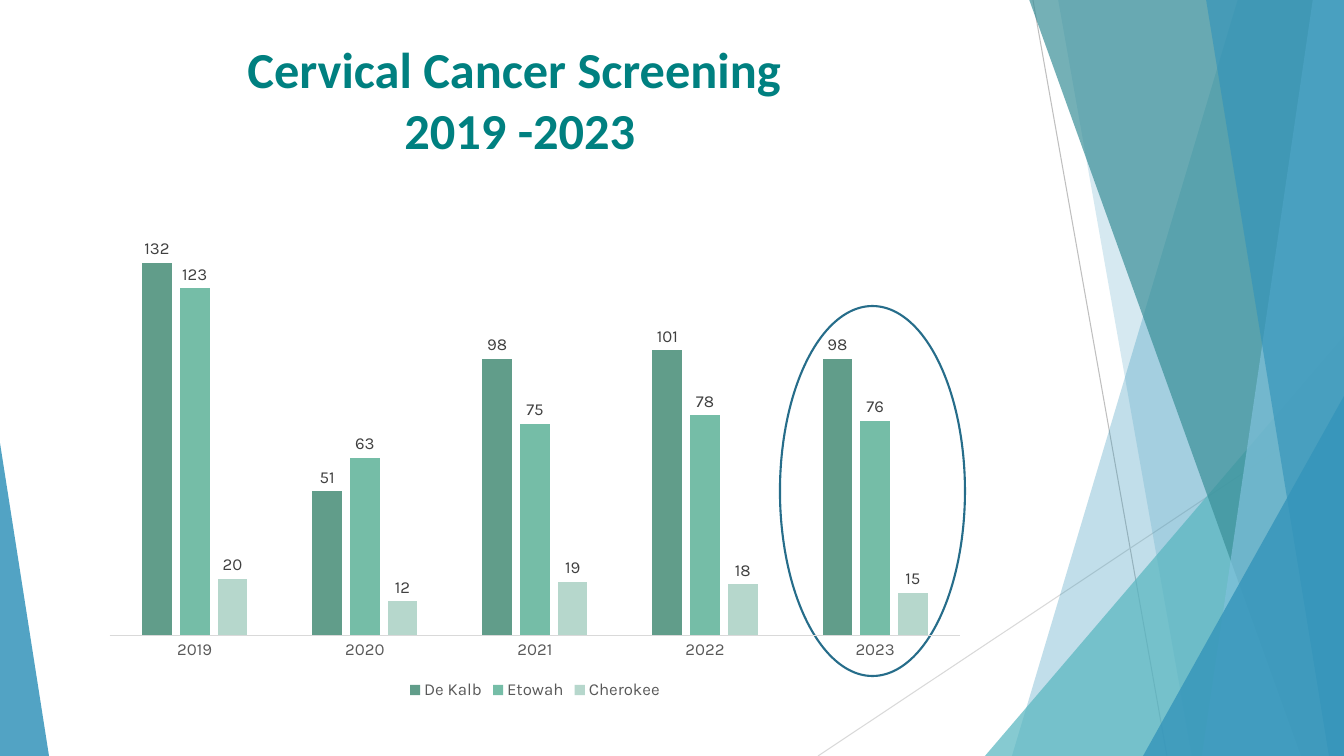
from lxml import etree
from pptx import Presentation
from pptx.chart import data
from pptx.dml import color
from pptx.enum import chart as ch, shapes, text
from pptx.oxml import ns
from pptx.util import Pt

PX = 914400 / 100.8
WIDTH, HEIGHT = 1344, 756


def emu(*lengths):
    return [round(length * PX) for length in lengths]


def paint(target, hex_color, opacity=100):
    """Colour a fill, line or font; opacity in percent applies to fills."""
    if hasattr(target, "solid"):
        target.solid()
        target = target.fore_color
    elif hasattr(target, "color"):
        target = target.color
    target.rgb = color.RGBColor.from_string(hex_color)
    if opacity < 100:
        srgb = target._xFill.find(ns.qn("a:srgbClr"))
        etree.SubElement(srgb, ns.qn("a:alpha"), val=str(opacity * 1000))


deck = Presentation()
deck.slide_width, deck.slide_height = emu(WIDTH, HEIGHT)
slide = deck.slides.add_slide(deck.slide_layouts[5])

# Thin lines behind the facets
for x1, y1, x2, y2, gray in [
    (1033, 0, 1167, HEIGHT, "BFBFBF"),
    (WIDTH, 406, 818, HEIGHT, "D9D9D9"),
]:
    ray = slide.shapes.add_connector(shapes.MSO_CONNECTOR.STRAIGHT, *emu(x1, y1, x2, y2))
    paint(ray.line, gray)
    ray.line.width = Pt(0.75)
    etree.SubElement(ray._element.spPr, ns.qn("a:effectLst"))

# Facets from back to front: bands give top and bottom x of the slanted edge,
# triangles give left, top, width, height and apex position
facets = [
    ("band", (1238, 1012), "3494BA", 30),
    ("band", (1058, 1192), "3494BA", 20),
    ("triangle", (985, 336, 359, 420, 1), "58B6C0", 72),
    ("band", (1029, 1301), "3A8F98", 70),
    ("band", (1313, 1202), "7FC1DB", 70),
    ("band", (1206, 1329), "3494BA", 65),
    ("triangle", (1143, 396, 201, 360, 1), "3494BA", 80),
    ("triangle", (0, 443, 49, 313, 0), "3494BA", 85),
]
for kind, geometry, hue, opacity in facets:
    if kind == "band":
        top_x, bottom_x = geometry
        outline = slide.shapes.build_freeform(top_x, -1, scale=PX)
        outline.add_line_segments([(WIDTH, -1), (WIDTH, HEIGHT), (bottom_x, HEIGHT)])
        facet = outline.convert_to_shape()
    else:
        *box, apex = geometry
        facet = slide.shapes.add_shape(shapes.MSO_SHAPE.ISOSCELES_TRIANGLE, *emu(*box))
        facet.adjustments[0] = apex
    paint(facet.fill, hue, opacity)
    facet.line.fill.background()
    facet.shadow.inherit = False

# Title
title = slide.shapes.title
title.left, title.top, title.width, title.height = emu(0, 30, 1040, 138)
title.text_frame.text = "Cervical Cancer Screening \v2019 -2023"
title.text_frame.word_wrap = True
title.text_frame.auto_size = text.MSO_AUTO_SIZE.NONE
title.text_frame.vertical_anchor = text.MSO_ANCHOR.MIDDLE
heading = title.text_frame.paragraphs[0]
heading.alignment = text.PP_ALIGN.CENTER
for run in heading.runs:
    run.font.name, run.font.size, run.font.bold = "Calibri", Pt(36), True
    paint(run.font, "008080")

# Ring around the latest year
ring = slide.shapes.add_shape(shapes.MSO_SHAPE.OVAL, *emu(780, 306, 185, 370))
ring.fill.background()
paint(ring.line, "266D8A")
ring.line.width = Pt(1.5)
ring.shadow.inherit = False

# Screenings by county and year
counties = [
    ("De Kalb", (132, 51, 98, 101, 98), "619D8A"),
    ("Etowah", (123, 63, 75, 78, 76), "75BDA7"),
    ("Cherokee", (20, 12, 19, 18, 15), "B6D7CC"),
]
screenings = data.CategoryChartData()
screenings.categories = ["2019", "2020", "2021", "2022", "2023"]
for county, counts, _ in counties:
    screenings.add_series(county, counts)
chart = slide.shapes.add_chart(
    ch.XL_CHART_TYPE.COLUMN_CLUSTERED, *emu(92, 231, 886, 473), screenings
).chart
chart.has_title = False
chart.font.name, chart.font.size = "Karla", Pt(10)
paint(chart.font, "000000")

chart.has_legend = True
chart.legend.position = ch.XL_LEGEND_POSITION.BOTTOM
chart.legend.include_in_layout = False

years = chart.category_axis
years.major_tick_mark = ch.XL_TICK_MARK.NONE
paint(years.format.line, "D9D9D9")
years.format.line.width = Pt(0.75)
counts_axis = chart.value_axis
counts_axis.minimum_scale, counts_axis.maximum_scale = 0, 140
counts_axis.has_major_gridlines = False
counts_axis.visible = False

plot = chart.plots[0]
plot.gap_width, plot.overlap = 219, -27
plot.vary_by_categories = False
label_fonts = [(chart.legend.font, "595959"), (years.tick_labels.font, "595959")]
for series, (_, _, hue) in zip(plot.series, counties):
    paint(series.format.fill, hue)
    labels = series.data_labels
    labels.show_value = True
    labels.position = ch.XL_LABEL_POSITION.OUTSIDE_END
    label_fonts.append((labels.font, "404040"))
for font, hue in label_fonts:
    font.name, font.size = "Karla", Pt(12)
    paint(font, hue)

# Clear chart and plot backgrounds so the ring shows through
chart_node = chart.element.find(ns.qn("c:chart"))
plot_area = chart_node.find(ns.qn("c:plotArea"))
for last_sibling in (chart_node, plot_area[-1]):
    clear = etree.Element(ns.qn("c:spPr"))
    etree.SubElement(clear, ns.qn("a:noFill"))
    border = etree.SubElement(clear, ns.qn("a:ln"))
    etree.SubElement(border, ns.qn("a:noFill"))
    last_sibling.addnext(clear)

deck.save("out.pptx")
